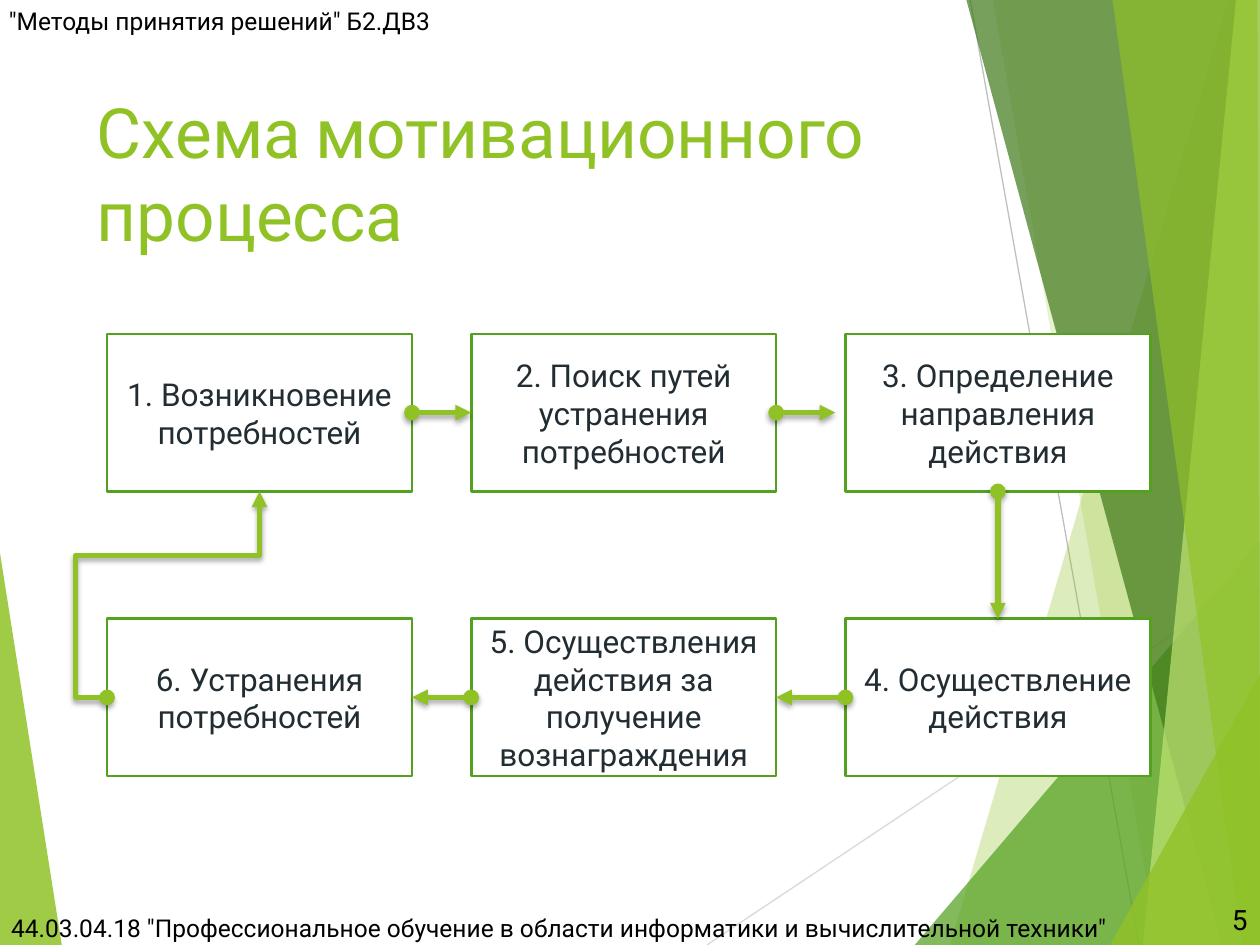
from lxml.etree import SubElement as Sub
from pptx import Presentation
from pptx.dml.color import RGBColor as RGB
from pptx.enum.shapes import MSO_CONNECTOR as LINK, MSO_SHAPE as SHAPE
from pptx.enum.text import MSO_ANCHOR as ANCHOR, PP_ALIGN as ALIGN
from pptx.oxml.ns import qn
from pptx.util import Inches, Pt

W, H = 10, 7.5
FONT = "Roboto"
HUE = {"lime": "90C226", "green": "54A021", "dark": "3F7819", "pale": "C0E474",
       "ink": "212D32", "black": "000000", "white": "FFFFFF",
       "gray": "BFBFBF", "light": "D9D9D9"}

# Content
TITLE = ["Схема", "мотивационного", "процесса"]
STEPS = [  # text, column, row
    ("1. Возникновение потребностей", 0, 0),
    ("2. Поиск путей устранения потребностей", 1, 0),
    ("3. Определение направления действия", 2, 0),
    ("4. Осуществление действия", 2, 1),
    ("5. Осуществления действия за получение вознаграждения", 1, 1),
    ("6. Устранения потребностей", 0, 1),
]
LABELS = [  # text, box, size, alignment
    ('"Методы принятия решений" Б2.ДВ3', (0, 0, 7.67, 0.33), 14, ALIGN.LEFT),
    ('44.03.04.18 "Профессиональное обучение в области информатики '
     'и вычислительной техники"', (-0.01, 7.21, 9.45, 0.3), 14, ALIGN.LEFT),
    ("5", (9.44, 7.1, 0.56, 0.4), 16, ALIGN.RIGHT),
]

# Backdrop: thin lines, and shards as (hue, opacity, corners)
RAYS = [("light", (5.61, H), (W, 4.57)), ("gray", (7.7, 0), (9.04, H))]
LEFT = ("lime", 85, [(0, 4.39), (0.49, H), (0, H)])
SHARDS = [
    ("lime", 30, [(9.75, 0), (7.54, H), (W, H), (W, 0)]),
    ("lime", 20, [(7.88, 0), (9.19, H), (W, H), (W, 0)]),
    ("green", 72, [(7.26, H), (W, 4.29), (W, H)]),
    ("dark", 70, [(7.67, 0), (9.7, H), (W, H), (W, 0)]),
    ("pale", 70, [(9.81, 0), (9.07, H), (W, H), (W, 0)]),
    ("lime", 65, [(8.83, 0), (9.86, H), (W, H), (9.98, 0)]),
    ("lime", 80, [(8.81, H), (W, 5.35), (W, H)]),
]

# Grid of steps
COLS, ROWS = (0.85, 3.74, 6.71), (2.65, 4.91)
BOX_W, BOX_H = 2.42, 1.25

deck = Presentation()
deck.slide_width, deck.slide_height = Inches(W), Inches(H)
slide = deck.slides.add_slide(deck.slide_layouts[6])
shapes = slide.shapes


def color(name):
    return RGB.from_string(HUE[name])


def style(para, size, hue, align=ALIGN.LEFT):
    para.alignment = align
    para.font.name, para.font.size = FONT, Pt(size)
    para.font.color.rgb = color(hue)


def shard(hue, alpha, pts):
    first, *rest = [(Inches(x), Inches(y)) for x, y in pts]
    pen = shapes.build_freeform(*first)
    pen.add_line_segments(rest, close=True)
    form = pen.convert_to_shape()
    form.shadow.inherit = False
    form.line.fill.background()
    form.fill.solid()
    form.fill.fore_color.rgb = color(hue)
    tint = form._element.spPr.find(qn("a:solidFill"))[0]
    Sub(tint, qn("a:alpha"), val=str(alpha * 1000))


def link(start, end, hue, width, kind=LINK.STRAIGHT):
    line = shapes.add_connector(kind, *map(Inches, start + end))
    line.line.color.rgb, line.line.width = color(hue), Pt(width)
    return line, Sub(line._element.spPr, qn("a:effectLst"))


def arrow(start, end, kind=LINK.STRAIGHT):
    line, fx = link(start, end, "lime", 3, kind)
    ln = line.line._get_or_add_ln()
    Sub(ln, qn("a:headEnd"), type="oval")
    Sub(ln, qn("a:tailEnd"), type="triangle")
    cast = Sub(fx, qn("a:outerShdw"), blurRad=str(Pt(3)), dist=str(Pt(2)),
               dir="5400000", rotWithShape="0")
    Sub(Sub(cast, qn("a:srgbClr"), val=HUE["black"]), qn("a:alpha"), val="35000")
    return line


def label(box):
    frame = shapes.add_textbox(*map(Inches, box)).text_frame
    frame.word_wrap = True
    return frame


def step(text, col, row):
    box = shapes.add_shape(SHAPE.RECTANGLE, *map(
        Inches, (COLS[col], ROWS[row], BOX_W, BOX_H)))
    box.shadow.inherit = False
    box.fill.solid()
    box.fill.fore_color.rgb = color("white")
    box.line.color.rgb, box.line.width = color("green"), Pt(1.5)
    frame = box.text_frame
    frame.word_wrap, frame.vertical_anchor = True, ANCHOR.MIDDLE
    frame.text = text
    style(frame.paragraphs[0], 18, "ink", ALIGN.CENTER)


# Backdrop
shard(*LEFT)
for hue, start, end in RAYS:
    link(start, end, hue, 0.75)
for item in SHARDS:
    shard(*item)

# Title, with narrower spaces between its words
para = label((0.67, 0.66, 7.5, 1.44)).paragraphs[0]
style(para, 39.6, "lime")
for i, word in enumerate(TITLE):
    if i:
        gap = para.add_run()
        gap.text = " "
        gap.font.name, gap.font.size = "Times New Roman", Pt(32.4)
        gap.font.bold = gap.font.italic = True
    para.add_run().text = word

# Steps
for item in STEPS:
    step(*item)

# Arrows between steps
top, low = (y + BOX_H / 2 for y in ROWS)
ends = [x + BOX_W for x in COLS]
mid = COLS[2] + BOX_W / 2
arrow((ends[0], top), (COLS[1], top))
arrow((ends[1], top), (ends[1] + 0.47, top))
arrow((mid, ROWS[0] + BOX_H), (mid, ROWS[1]))
for i in (2, 1):
    arrow((COLS[i], low), (ends[i - 1], low))

# Loop from the last step back to the first
loop = arrow((COLS[0], low), (COLS[0] + BOX_W / 2, ROWS[0] + BOX_H), LINK.ELBOW)
geom = loop._element.spPr.find(qn("a:prstGeom"))
geom.set("prst", "bentConnector4")
guides = geom.find(qn("a:avLst"))
for name, share in (("adj1", -20600), ("adj2", 69000)):
    Sub(guides, qn("a:gd"), name=name, fmla=f"val {share}")

# Header, footer and page number
for text, box, size, align in LABELS:
    frame = label(box)
    frame.vertical_anchor = ANCHOR.MIDDLE
    if box[1] == 0:
        frame.margin_left = frame.margin_right = Inches(0.07)
        frame.margin_top = frame.margin_bottom = Inches(0.04)
    frame.text = text
    style(frame.paragraphs[0], size, "black", align)

deck.save("out.pptx")
